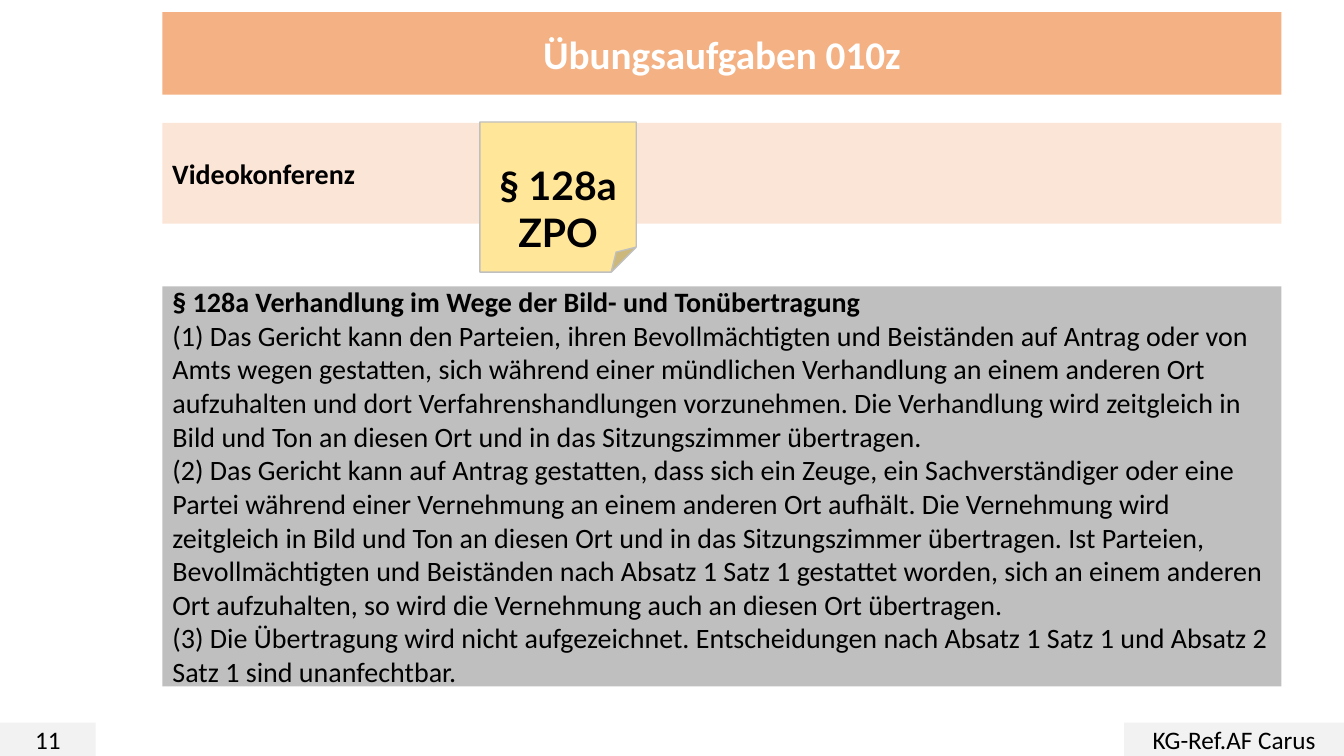
"""Builds the exercise slide on video hearings under § 128a ZPO."""
from lxml import etree
from pptx import Presentation
from pptx.dml.color import RGBColor
from pptx.enum.shapes import MSO_SHAPE
from pptx.enum.text import MSO_ANCHOR, MSO_AUTO_SIZE, PP_ALIGN
from pptx.oxml.ns import qn
from pptx.util import Inches, Pt

LEFT, CENTER = PP_ALIGN.LEFT, PP_ALIGN.CENTER
TOP, MIDDLE = MSO_ANCHOR.TOP, MSO_ANCHOR.MIDDLE
RECT, NOTE = MSO_SHAPE.RECTANGLE, MSO_SHAPE.FOLDED_CORNER

TITLE = "Übungsaufgaben 010z"
TOPIC = "Videokonferenz"
STICKY = "§ 128a ZPO"
PAGE = "11"
AUTHOR = "KG-Ref.AF Carus"
LAW = [
    "§ 128a Verhandlung im Wege der Bild- und Tonübertragung",
    "(1) Das Gericht kann den Parteien, ihren Bevollmächtigten und Beiständen auf "
    "Antrag oder von Amts wegen gestatten, sich während einer mündlichen Verhandlung "
    "an einem anderen Ort aufzuhalten und dort Verfahrenshandlungen vorzunehmen. Die "
    "Verhandlung wird zeitgleich in Bild und Ton an diesen Ort und in das "
    "Sitzungszimmer übertragen.",
    "(2) Das Gericht kann auf Antrag gestatten, dass sich ein Zeuge, ein "
    "Sachverständiger oder eine Partei während einer Vernehmung an einem anderen Ort "
    "aufhält. Die Vernehmung wird zeitgleich in Bild und Ton an diesen Ort und in das "
    "Sitzungszimmer übertragen. Ist Parteien, Bevollmächtigten und Beiständen nach "
    "Absatz 1 Satz 1 gestattet worden, sich an einem anderen Ort aufzuhalten, so wird "
    "die Vernehmung auch an diesen Ort übertragen.",
    "(3) Die Übertragung wird nicht aufgezeichnet. Entscheidungen nach Absatz 1 "
    "Satz 1 und Absatz 2 Satz 1 sind unanfechtbar.",
]
COLORS = {
    "title": "F4B183", "topic": "FBE5D6", "law": "BFBFBF", "footer": "F2F2F2",
    "note": "FFE699", "note_line": "BFBFBF", "text": "000000", "white": "FFFFFF",
}

WIDTH, HEIGHT = 13.33, 7.5
COL_X, COL_W = 1.61, 11.1
FOOT_H = 0.33
FOOT_Y = HEIGHT - FOOT_H
PAGE_W, AUTHOR_W = 0.95, 2.18


def rgb(name):
    return RGBColor.from_string(COLORS[name])


def place(sp, x, y, w, h, fill):
    box = {"left": x, "top": y, "width": w, "height": h}
    for key, value in box.items():
        setattr(sp, key, Inches(value))
    sp.fill.solid()
    sp.fill.fore_color.rgb = rgb(fill)
    sp.line.fill.background()


def write(sp, lines, size, bold=1, align=LEFT, color="text", font="Calibri", anchor=MIDDLE):
    """Fills a shape with paragraphs, of which the first `bold` ones are bold."""
    tf = sp.text_frame
    frame = {"word_wrap": True, "auto_size": MSO_AUTO_SIZE.NONE, "vertical_anchor": anchor}
    for key, value in frame.items():
        setattr(tf, key, value)
    for i, line in enumerate(lines):
        p = tf.paragraphs[0] if i == 0 else tf.add_paragraph()
        for key, value in {"alignment": align, "space_before": Pt(0)}.items():
            setattr(p, key, value)
        r = p.add_run()
        r.text = line
        for key, value in {"name": font, "size": Pt(size), "bold": i < bold}.items():
            setattr(r.font, key, value)
        r.font.color.rgb = rgb(color)


def add_box(s, kind, box, fill):
    sp = s.shapes.add_shape(kind, 0, 0, 0, 0)
    sp.shadow.inherit = False
    place(sp, *box, fill)
    return sp


def main():
    prs = Presentation()
    prs.slide_width, prs.slide_height = Inches(WIDTH), Inches(HEIGHT)
    s = prs.slides.add_slide(prs.slide_layouts[1])

    title, law = s.placeholders
    place(title, COL_X, 0.12, COL_W, 0.82, "title")
    geom = etree.Element(qn("a:prstGeom"), prst="roundRect")
    etree.SubElement(geom, qn("a:avLst"))
    title.element.spPr.find(qn("a:xfrm")).addnext(geom)
    write(title, [TITLE], 28, align=CENTER, color="white")

    place(law, COL_X, 2.84, COL_W, 3.97, "law")
    write(law, LAW, 20)
    for p in law.text_frame.paragraphs:
        pPr = p._p.get_or_add_pPr()
        for key in ("marL", "indent"):
            pPr.set(key, "0")
        etree.SubElement(pPr, qn("a:buNone"))

    topic = add_box(s, RECT, (COL_X, 1.22, COL_W, 1), "topic")
    write(topic, [TOPIC], 20)

    footers = [(PAGE, 0, PAGE_W), (AUTHOR, WIDTH - AUTHOR_W, AUTHOR_W)]
    for text, x, w in footers:
        sp = add_box(s, RECT, (x, FOOT_Y, w, FOOT_H), "footer")
        write(sp, [text], 18, bold=0, align=CENTER)

    note = add_box(s, NOTE, (4.76, 1.21, 1.55, 1.49), "note")
    note.line.color.rgb = rgb("note_line")
    note.line.width = Pt(1)
    write(note, [STICKY], 28, align=CENTER, font="Lato", anchor=TOP)
    note.text_frame.margin_top = Inches(0.39)
    note.text_frame.margin_bottom = 0

    prs.save("out.pptx")


if __name__ == "__main__":
    main()
